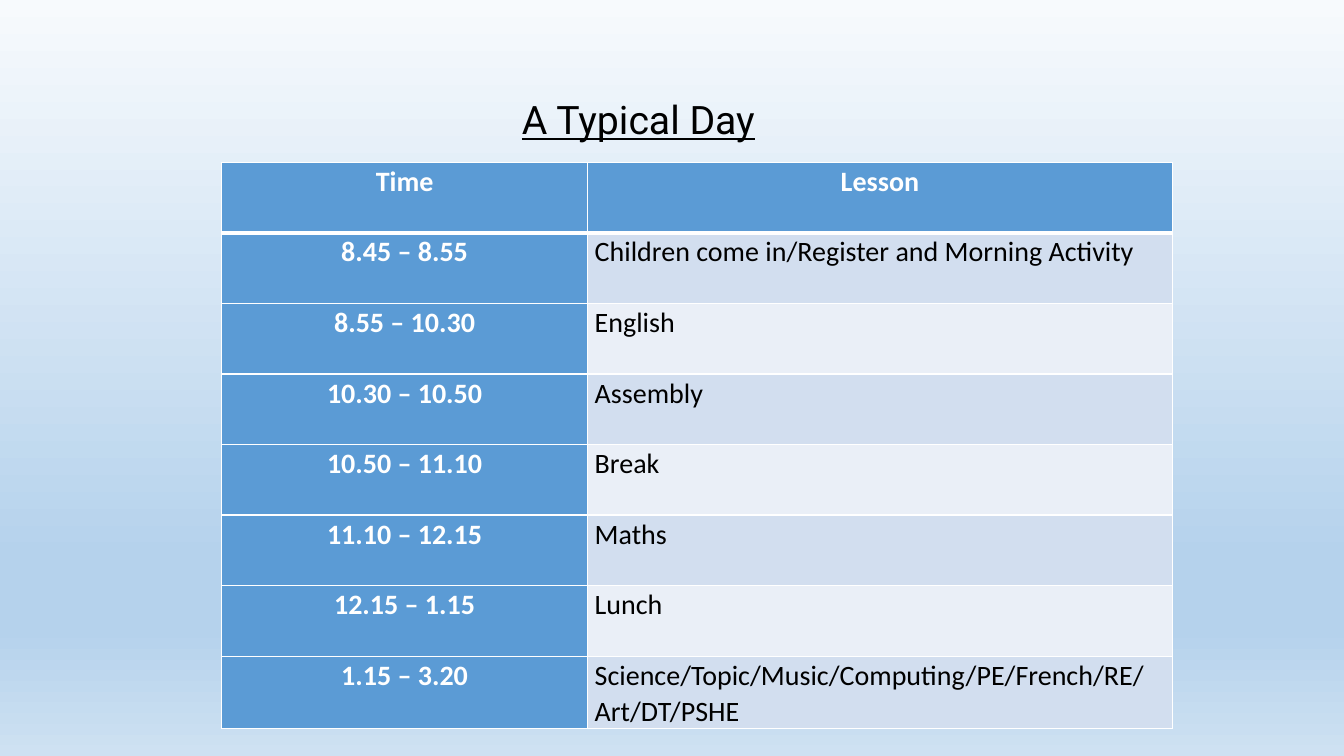
from lxml import etree
from pptx import Presentation
from pptx.dml.color import RGBColor
from pptx.enum.text import MSO_AUTO_SIZE as AutoSize, PP_ALIGN as Align
from pptx.oxml.ns import qn
from pptx.util import Pt

BLACK = RGBColor(0x00, 0x00, 0x00)
WHITE = RGBColor(0xFF, 0xFF, 0xFF)
BLUE = RGBColor(0x5B, 0x9B, 0xD5)
BAND_DARK = RGBColor(0xD2, 0xDE, 0xEF)
BAND_LIGHT = RGBColor(0xEA, 0xEF, 0xF7)
SKY_STOPS = [
    (0, RGBColor(0xF7, 0xFA, 0xFD)),
    (74, RGBColor(0xB5, 0xD2, 0xEC)),
    (83, RGBColor(0xB5, 0xD2, 0xEC)),
    (100, RGBColor(0xCE, 0xE1, 0xF2)),
]

TIMETABLE = [
    ("Time", "Lesson"),
    ("8.45 – 8.55", "Children come in/Register and Morning Activity"),
    ("8.55 – 10.30", "English"),
    ("10.30 – 10.50", "Assembly"),
    ("10.50 – 11.10", "Break"),
    ("11.10 – 12.15", "Maths"),
    ("12.15 – 1.15", "Lunch"),
    ("1.15 – 3.20", "Science/Topic/Music/Computing/PE/French/RE/ Art/DT/PSHE"),
]
COLUMN_WIDTHS = (Pt(261.36), Pt(417.6))
ROW_HEIGHT = Pt(50.4)

TITLE_FONT = {"name": "Roboto", "size": Pt(28), "underline": True}
HEADING_FONT = {"name": "Calibri", "size": Pt(20), "bold": True}
LESSON_FONT = {"name": "Calibri", "size": Pt(20), "bold": False}
CELL_MARGINS = {
    "margin_left": Pt(5.04),
    "margin_right": Pt(5.04),
    "margin_top": 0,
    "margin_bottom": 0,
}


def apply_format(target, values):
    for name, value in values.items():
        setattr(target, name, value)


def write_text(paragraph, text, font_format, color):
    run = paragraph.add_run()
    run.text = text
    apply_format(run.font, font_format)
    run.font.color.rgb = color


def add_solid_color(parent, color):
    solid = etree.SubElement(parent, qn("a:solidFill"))
    etree.SubElement(solid, qn("a:srgbClr"), val=str(color))


def paint_sky(slide):
    """Fill the background with the top-to-bottom gradient."""
    fill = slide.background.fill
    fill.gradient()
    fill.gradient_angle = 270
    stops = slide.element.find(".//" + qn("a:gsLst"))
    for stop in list(stops):
        stops.remove(stop)
    for percent, color in SKY_STOPS:
        stop = etree.SubElement(stops, qn("a:gs"), pos=str(percent * 1000))
        etree.SubElement(stop, qn("a:srgbClr"), val=str(color))


def add_title(slide, text):
    title = slide.shapes.add_textbox(Pt(365.76), Pt(64.8), Pt(231.84), Pt(41.04))
    frame = title.text_frame
    apply_format(frame, {"word_wrap": False, "auto_size": AutoSize.SHAPE_TO_FIT_TEXT})
    write_text(frame.paragraphs[0], text, TITLE_FONT, BLACK)


def add_borders(cell, top, bottom):
    properties = cell._tc.get_or_add_tcPr()
    widths = {"a:lnL": Pt(1), "a:lnR": Pt(1), "a:lnT": top, "a:lnB": bottom}
    for side, width in widths.items():
        line = etree.SubElement(properties, qn(side), w=str(width))
        add_solid_color(line, WHITE)


def format_cell(cell, text, row, column):
    is_heading = row == 0 or column == 0
    add_borders(
        cell,
        top=Pt(3) if row == 1 else Pt(1),
        bottom=Pt(3) if row == 0 else Pt(1),
    )
    band = BAND_DARK if row % 2 else BAND_LIGHT
    cell.fill.solid()
    cell.fill.fore_color.rgb = BLUE if is_heading else band
    apply_format(cell, CELL_MARGINS)

    paragraph = cell.text_frame.paragraphs[0]
    paragraph.line_spacing = 1.07
    if is_heading:
        paragraph.alignment = Align.CENTER
        write_text(paragraph, text, HEADING_FONT, WHITE)
    else:
        write_text(paragraph, text, LESSON_FONT, BLACK)


def add_timetable(slide, entries):
    table = slide.shapes.add_table(
        len(entries), len(COLUMN_WIDTHS), Pt(158.4), Pt(115.92),
        sum(COLUMN_WIDTHS), ROW_HEIGHT * len(entries),
    ).table
    for column, width in zip(table.columns, COLUMN_WIDTHS):
        column.width = width
    for row, entry in enumerate(entries):
        for column, text in enumerate(entry):
            format_cell(table.cell(row, column), text, row, column)


def main():
    presentation = Presentation()
    presentation.slide_width = Pt(960)
    presentation.slide_height = Pt(540)
    slide = presentation.slides.add_slide(presentation.slide_layouts[6])
    paint_sky(slide)
    add_title(slide, "A Typical Day")
    add_timetable(slide, TIMETABLE)
    presentation.save("out.pptx")


if __name__ == "__main__":
    main()
